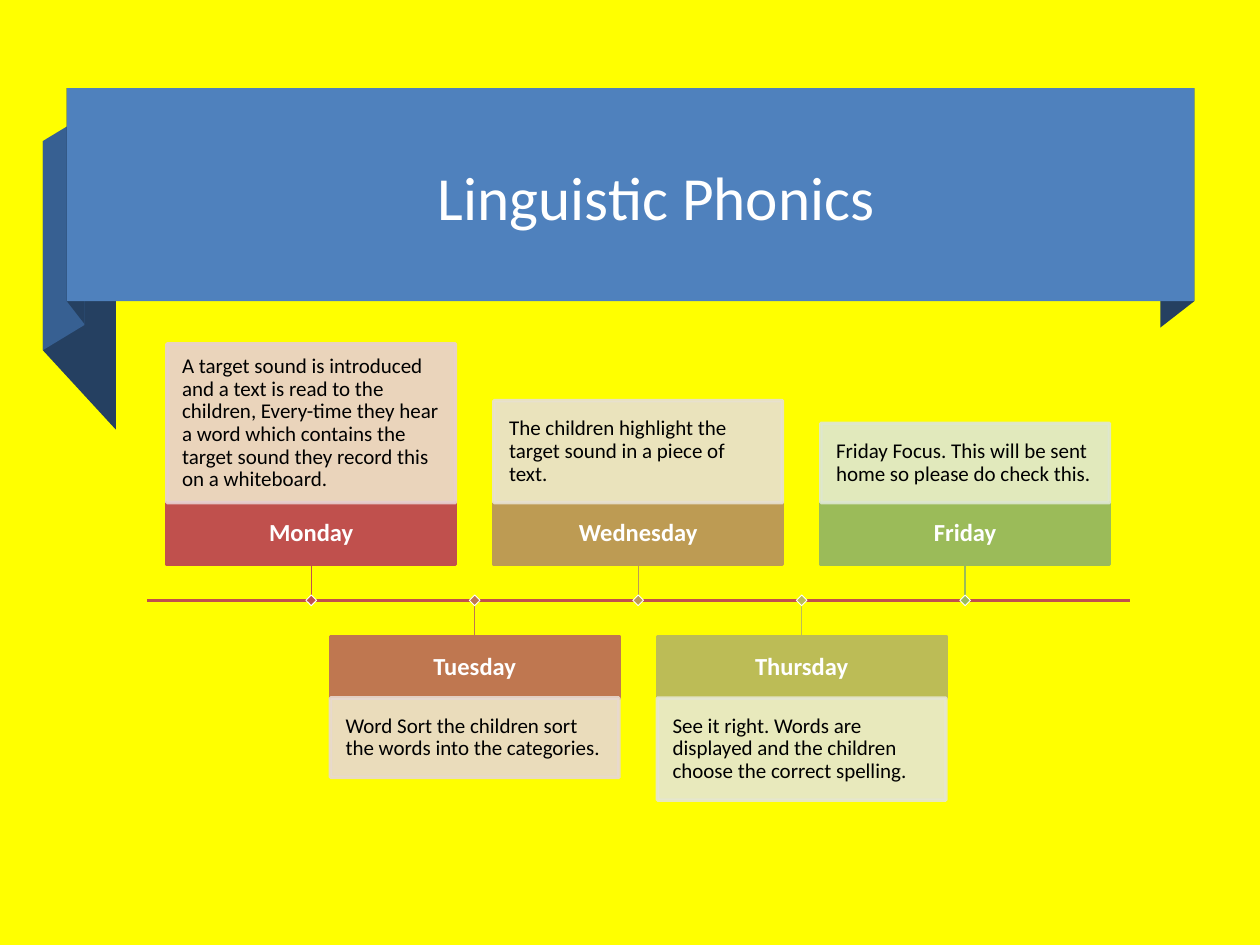
from lxml.etree import SubElement
from pptx import Presentation
from pptx.dml.color import RGBColor
from pptx.enum.shapes import MSO_CONNECTOR, MSO_SHAPE
from pptx.enum.text import MSO_ANCHOR, PP_ALIGN
from pptx.oxml.ns import qn
from pptx.util import Inches, Pt

COLORS = {
    "background": "FFFF00", "banner": "4F81BD", "side": "376092", "fold": "254061",
    "axis": "C0504D", "white": "FFFFFF", "text": "000000",
}
# day, header colour, note colour, note height, note
DAYS = [
    ("Monday", "C0504D", "E8D0D0", 1.26,
     "A target sound is introduced and a text is read to the children, Every-time "
     "they hear a word which contains the target sound they record this on a whiteboard."),
    ("Tuesday", "BF7750", "E8D9D0", 0.63,
     "Word Sort the children sort the words into the categories."),
    ("Wednesday", "BD9B53", "E8E1D1", 0.81,
     "The children highlight the target sound in a piece of text."),
    ("Thursday", "BCBC56", "E6E7D1", 0.81,
     "See it right. Words are displayed and the children choose the correct spelling."),
    ("Friday", "9BBB59", "DEE7D1", 0.63,
     "Friday Focus. This will be sent home so please do check this."),
]


def rgb(color):
    return RGBColor.from_string(color)


def paint(shape, fill, line=None, width=2):
    shape.shadow.inherit = False
    shape.fill.solid()
    shape.fill.fore_color.rgb = rgb(fill)
    if line:
        shape.line.color.rgb = rgb(line)
        shape.line.width = Pt(width)
    else:
        shape.line.fill.background()


def set_opacity(shape, percent):
    """Apply the opacity to both fill and line."""
    for color in shape._element.spPr.iter(qn("a:srgbClr")):
        SubElement(color, qn("a:alpha")).set("val", str(percent * 1000))


def add_rect(s, x, y, w, h, fill, line=None, width=2):
    rect = s.shapes.add_shape(MSO_SHAPE.RECTANGLE, Inches(x), Inches(y), Inches(w), Inches(h))
    paint(rect, fill, line, width)
    return rect


def add_line(s, x1, y1, x2, y2, color, width):
    line = s.shapes.add_connector(
        MSO_CONNECTOR.STRAIGHT, Inches(x1), Inches(y1), Inches(x2), Inches(y2))
    line.line.color.rgb = rgb(color)
    line.line.width = Pt(width)
    SubElement(line._element.spPr, qn("a:effectLst"))


def write(shape, text, size, color, inset, align, bold=False, spacing=0.9):
    tf = shape.text_frame
    tf.word_wrap = True
    tf.vertical_anchor = MSO_ANCHOR.MIDDLE
    tf.margin_left = tf.margin_right = tf.margin_top = tf.margin_bottom = Inches(inset)
    p = tf.paragraphs[0]
    p.alignment = align
    p.line_spacing = spacing
    r = p.add_run()
    r.text = text
    r.font.name = "Calibri"
    r.font.size = Pt(size)
    r.font.bold = bold
    r.font.color.rgb = rgb(color)


def add_banner(s, x, y, w, h, title):
    """Ribbon whose front is the given box, with folds at both ends."""
    folds = [
        ("fold", [(w, h), (w - 0.27, h + 0.21), (w - 0.27, 0.21), (w, 0)]),
        ("fold", [(0.39, 2.71), (-0.19, 2.08), (-0.19, 0.42), (0.39, 1.05)]),
        ("side", [(0.14, 1.88), (-0.19, 2.08), (-0.19, 0.42), (0.14, 0.22)]),
        ("fold", [(0.14, 1.87), (0, h), (0, 0), (0.14, 0.19)]),
    ]
    for name, corners in folds:
        points = [(Inches(x + dx), Inches(y + dy)) for dx, dy in corners]
        builder = s.shapes.build_freeform(*points[0])
        builder.add_line_segments(points[1:], close=True)
        paint(builder.convert_to_shape(), COLORS[name])
    add_rect(s, x, y, w, h, COLORS["banner"])
    box = s.shapes.add_textbox(Inches(x + 0.58), Inches(y + 0.13), Inches(8.2), Inches(1.45))
    write(box, title, 35, COLORS["white"], 0.05, PP_ALIGN.CENTER, spacing=1)


def add_day(s, center, axis, above, day, color, note_color, note_h, note):
    """Header and note on one side of the axis, tied to it by a stem and a marker."""
    w, header_h, stem, marker = 2.29, 0.49, 0.285, 0.06
    x = center - w / 2
    if above:
        stem_end = axis - stem
        header_y = stem_end - header_h
        note_y = header_y - note_h
    else:
        stem_end = header_y = axis + stem
        note_y = header_y + header_h
    header = add_rect(s, x, header_y, w, header_h, color, color)
    write(header, day, 14, COLORS["white"], 0.08, PP_ALIGN.CENTER, bold=True)
    body = add_rect(s, x, note_y, w, note_h, note_color, note_color)
    set_opacity(body, 90)
    write(body, note, 12, COLORS["text"], 0.12, PP_ALIGN.LEFT)
    add_line(s, center, stem_end, center, axis, color, 0.75)
    diamond = add_rect(s, center - marker / 2, axis - marker / 2, marker, marker,
                       color, COLORS["white"], 0.5)
    diamond.rotation = 45


def add_timeline(s, x, y, w, days):
    first, step = 1.3, 5.19 / 4
    add_line(s, x, y, x + w, y, COLORS["axis"], 2)
    for i, day in enumerate(days):
        add_day(s, x + first + i * step, y, i % 2 == 0, *day)


def main():
    prs = Presentation()
    prs.slide_width, prs.slide_height = Inches(10), Inches(7.5)
    s = prs.slides.add_slide(prs.slide_layouts[6])
    s.background.fill.solid()
    s.background.fill.fore_color.rgb = rgb(COLORS["background"])
    add_banner(s, 0.53, 0.7, 8.95, 1.69, "Linguistic Phonics")
    add_timeline(s, 1.17, 4.765, 7.8, DAYS)
    prs.save("out.pptx")


if __name__ == "__main__":
    main()
